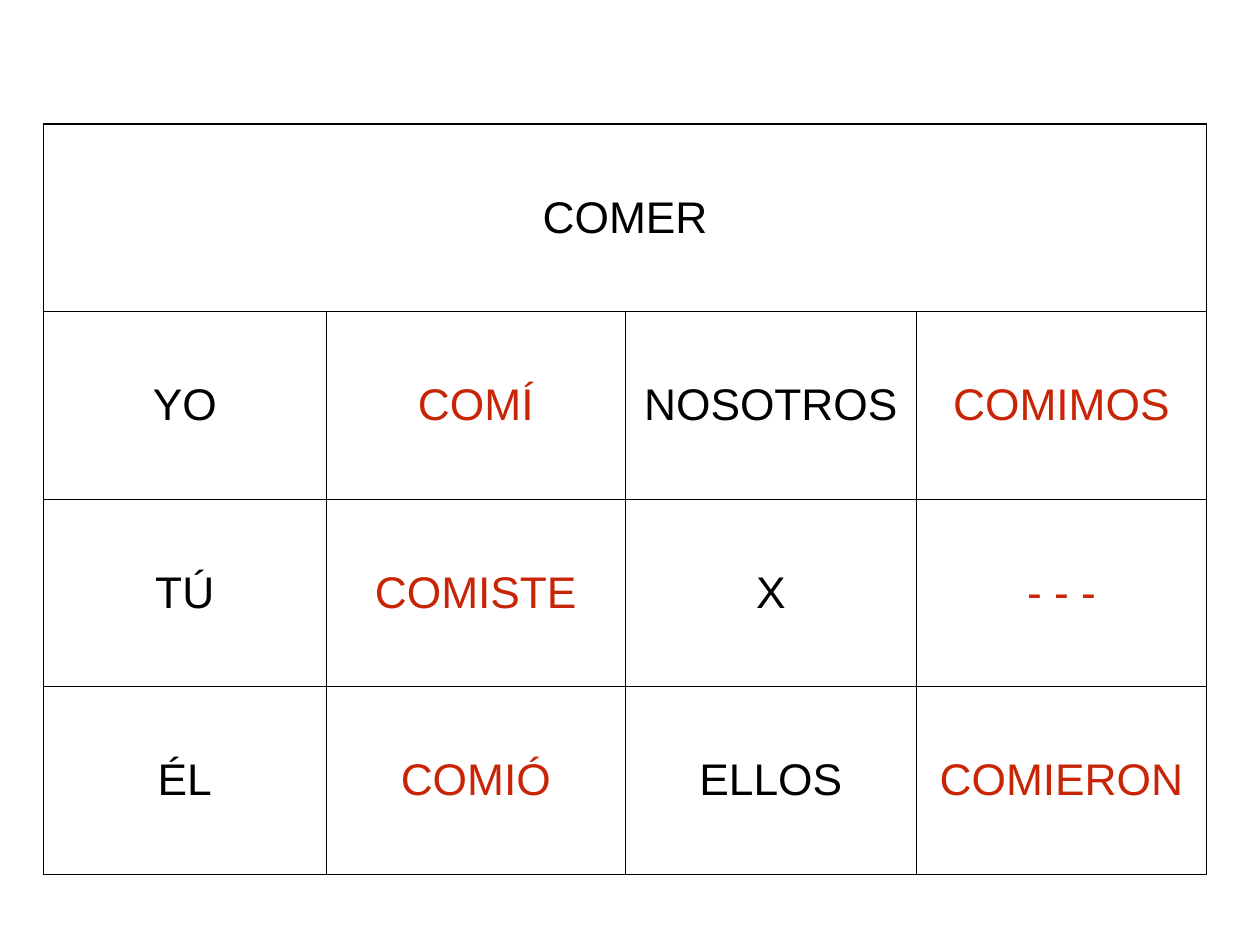
from lxml import etree
from pptx import Presentation
from pptx.dml.color import RGBColor
from pptx.enum.text import MSO_ANCHOR, PP_ALIGN
from pptx.oxml.ns import qn
from pptx.util import Inches, Pt

CENTER = PP_ALIGN.CENTER
MIDDLE = MSO_ANCHOR.MIDDLE
COLORS = {"text": "000000", "verb": "C82506", "line": "000000"}

VERB = "COMER"
FORMS = [
    ("YO", "COMÍ", "NOSOTROS", "COMIMOS"),
    ("TÚ", "COMISTE", "X", "- - -"),
    ("ÉL", "COMIÓ", "ELLOS", "COMIERON"),
]
WIDTHS = (3.19, 3.38, 3.28, 3.28)


class Board:
    """Holds the text style and the current slide."""

    font = "Arial"
    size = Pt(36)
    inset = Inches(0.06)
    line = Pt(1)

    def __init__(self, slide):
        self.slide = slide

    def border(self, cell):
        props = cell._tc.get_or_add_tcPr()
        for side in ("a:lnL", "a:lnR", "a:lnT", "a:lnB"):
            edge = etree.SubElement(props, qn(side), w=str(self.line))
            fill = etree.SubElement(edge, qn("a:solidFill"))
            etree.SubElement(fill, qn("a:srgbClr"), val=COLORS["line"])

    def cell(self, cell, text, color):
        self.border(cell)
        cell.fill.background()
        cell.vertical_anchor = MIDDLE
        cell.margin_left = cell.margin_right = self.inset
        cell.margin_top = cell.margin_bottom = self.inset
        cell.text = text
        para = cell.text_frame.paragraphs[0]
        para.alignment = CENTER
        para.font.name = self.font
        para.font.size = self.size
        para.font.color.rgb = RGBColor.from_string(COLORS[color])

    def table(self, verb, forms, left, top, widths, height):
        rows = [(verb,) + ("",) * (len(widths) - 1)] + forms
        frame = self.slide.shapes.add_table(
            len(rows), len(widths), Inches(left), Inches(top),
            Inches(sum(widths)), Inches(height))
        table = frame.table
        table.first_row = table.horz_banding = False
        for col, width in zip(table.columns, widths):
            col.width = Inches(width)

        # Pronouns are black and verb forms red, in alternate columns
        for r, row in enumerate(rows):
            for c, text in enumerate(row):
                color = "verb" if r and c % 2 else "text"
                self.cell(table.cell(r, c), text, color)

        # The verb spans the whole top row
        table.cell(0, 0).merge(table.cell(0, len(widths) - 1))


def main():
    deck = Presentation()
    deck.slide_width = Inches(14.22)
    deck.slide_height = Inches(10.67)
    board = Board(deck.slides.add_slide(deck.slide_layouts[6]))

    # Conjugation table
    board.table(VERB, FORMS, 0.49, 1.4, WIDTHS, 8.47)
    deck.save("out.pptx")


if __name__ == "__main__":
    main()
